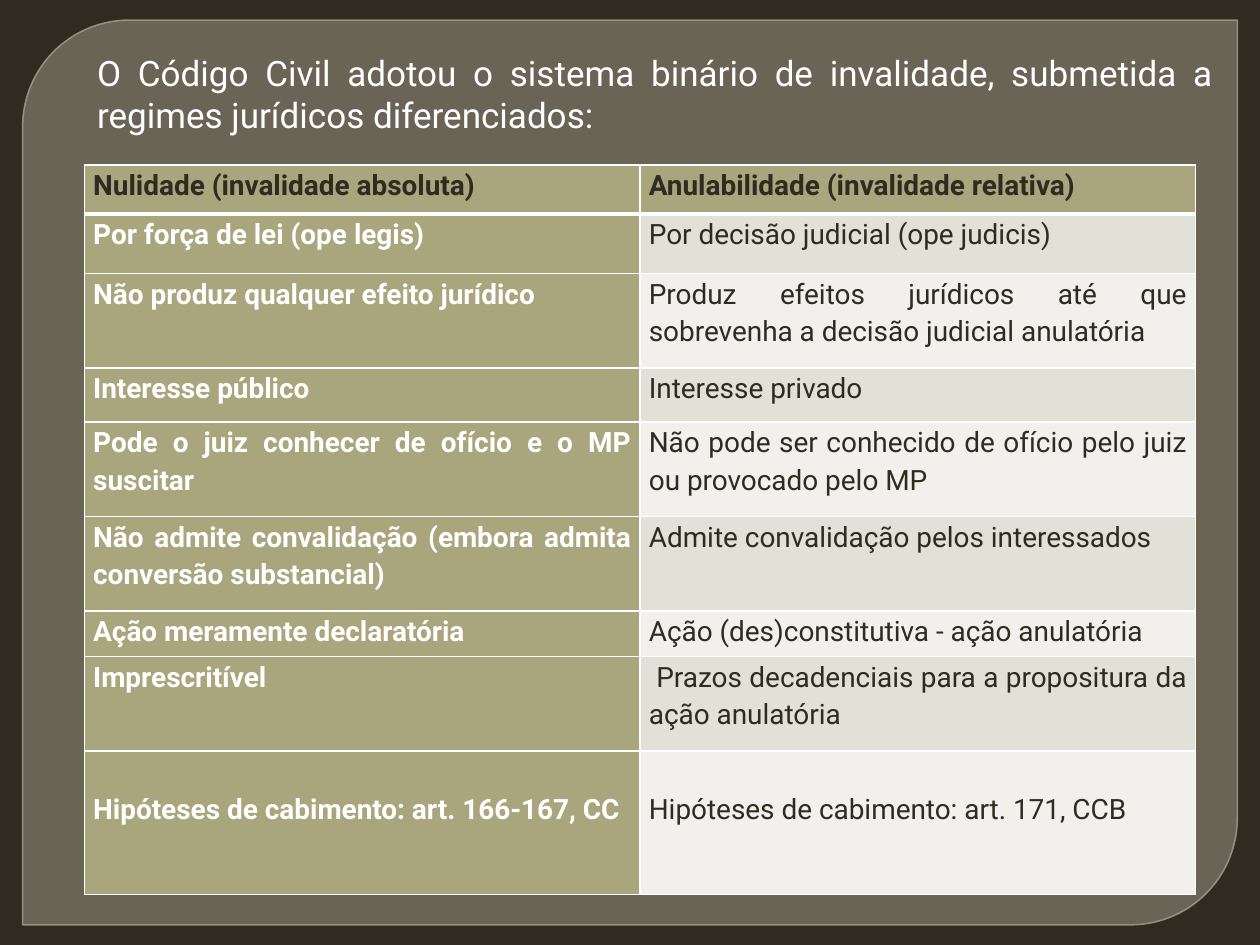
from lxml.etree import SubElement
from pptx import Presentation
from pptx.dml.color import RGBColor
from pptx.enum.shapes import MSO_SHAPE as Shape
from pptx.enum.text import MSO_ANCHOR as Anchor, PP_ALIGN as Align
from pptx.oxml.ns import qn
from pptx.util import Inches, Pt

COLORS = {
    "background": "2F2B20", "panel": "8A8374", "panel_line": "A09989",
    "dark": "2F2B20", "white": "FFFFFF", "olive": "A9A57C",
    "band_dark": "E2E1D7", "band_light": "F1F0EC",
}
FONT = "Roboto"
TITLE = ("O Código Civil adotou o sistema binário de invalidade, "
         "submetida a regimes jurídicos diferenciados:")
# Each row: height, nullity, annullability
ROWS = [
    (0.39, "Nulidade (invalidade absoluta)", "Anulabilidade (invalidade relativa)"),
    (0.47, "Por força de lei (ope legis)", "Por decisão judicial (ope judicis)"),
    (0.75, "Não produz qualquer efeito jurídico",
     "Produz efeitos jurídicos até que sobrevenha a decisão judicial anulatória"),
    (0.43, "Interesse público", "Interesse privado"),
    (0.75, "Pode o juiz conhecer de ofício e o MP suscitar",
     "Não pode ser conhecido de ofício pelo juiz ou provocado pelo MP"),
    (0.75, "Não admite convalidação (embora admita conversão substancial)",
     "Admite convalidação pelos interessados"),
    (0.36, "Ação meramente declaratória", "Ação (des)constitutiva - ação anulatória"),
    (0.75, "Imprescritível",
     " Prazos decadenciais para a propositura da ação anulatória"),
    (1.14, "Hipóteses de cabimento: art. 166-167, CC",
     "Hipóteses de cabimento: art. 171, CCB"),
]


def rgb(name):
    return RGBColor.from_string(COLORS[name])


def set_fill(fill, color):
    fill.solid()
    fill.fore_color.rgb = rgb(color)


def set_alpha(fill_parent, percent):
    color = fill_parent.find(qn("a:solidFill"))[0]
    SubElement(color, qn("a:alpha"), val=str(percent * 1000))


def write(frame, text, size=16, color="dark", bold=False, spacing=None):
    frame.word_wrap = True
    paragraph = frame.paragraphs[0]
    paragraph.alignment = Align.JUSTIFY
    paragraph.line_spacing = spacing
    run = paragraph.add_run()
    run.text = text
    run.font.name = FONT
    run.font.size = Pt(size)
    run.font.bold = bold
    run.font.color.rgb = rgb(color)


def add_panel(slide):
    panel = slide.shapes.add_shape(Shape.ROUND_2_DIAG_RECTANGLE, Inches(0.18),
                                   Inches(0.16), Inches(9.64), Inches(7.18))
    panel.adjustments[0] = 0.118
    panel.adjustments[1] = 0
    panel.shadow.inherit = False
    set_fill(panel.fill, "panel")
    set_alpha(panel.element.spPr, 65)
    set_fill(panel.line.fill, "panel_line")
    panel.line.width = Pt(0.87)
    set_alpha(panel.element.spPr.find(qn("a:ln")), 88)
    # The panel lies behind the title
    slide.shapes.title.element.addprevious(panel.element)


def format_title(title):
    title.left, title.top = Inches(0.67), Inches(0.36)
    title.width, title.height = Inches(9.06), Inches(1.45)
    title.text_frame.vertical_anchor = Anchor.TOP
    write(title.text_frame, TITLE, size=20, color="white")


def set_borders(cell, top=1, bottom=1):
    properties = cell._tc.get_or_add_tcPr()
    for side, width in (("L", 1), ("R", 1), ("T", top), ("B", bottom)):
        border = SubElement(properties, qn(f"a:ln{side}"), w=str(Pt(width)))
        solid = SubElement(border, qn("a:solidFill"))
        SubElement(solid, qn("a:srgbClr"), val=COLORS["white"])


def format_cell(cell, text, row, column):
    header, first_column = row == 0, column == 0
    cell.margin_left = cell.margin_right = Inches(0.07)
    # The last row starts one line lower
    cell.margin_top = Inches(0.3 if row == len(ROWS) - 1 else 0)
    cell.margin_bottom = 0
    set_borders(cell, top=3 if row == 1 else 1, bottom=3 if header else 1)
    if header or first_column:
        set_fill(cell.fill, "olive")
    else:
        set_fill(cell.fill, "band_dark" if row % 2 else "band_light")
    write(cell.text_frame, text, bold=header or first_column, spacing=1.15,
          color="white" if first_column and not header else "dark")


def add_comparison(slide):
    height = sum(row[0] for row in ROWS)
    comparison = slide.shapes.add_table(len(ROWS), 2, Inches(0.67), Inches(1.31),
                                        Inches(8.82), Inches(height)).table
    comparison.first_col = True
    for row, (row_height, *texts) in enumerate(ROWS):
        comparison.rows[row].height = Inches(row_height)
        for column, text in enumerate(texts):
            format_cell(comparison.cell(row, column), text, row, column)


def main():
    deck = Presentation()
    deck.slide_width, deck.slide_height = Inches(10), Inches(7.5)
    slide = deck.slides.add_slide(deck.slide_layouts[5])
    set_fill(slide.background.fill, "background")
    add_panel(slide)
    format_title(slide.shapes.title)
    add_comparison(slide)
    deck.save("out.pptx")


if __name__ == "__main__":
    main()
